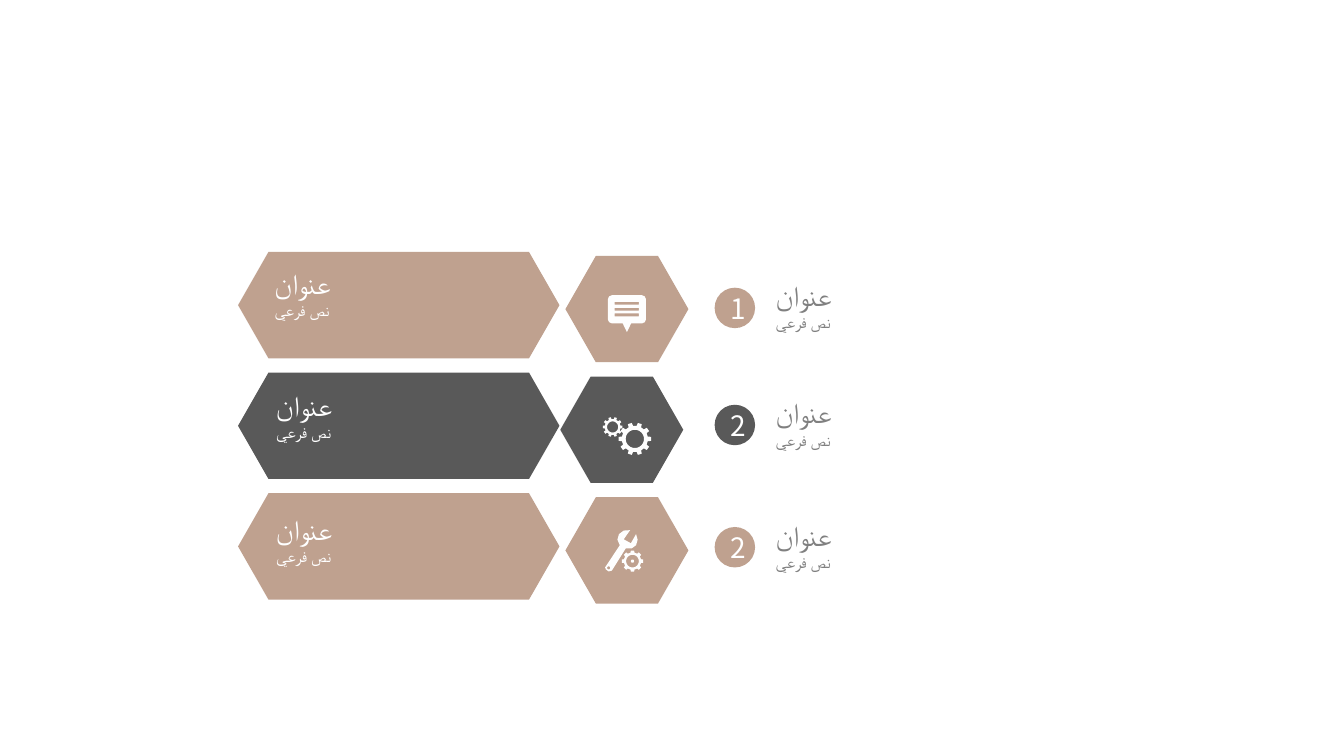
from math import cos, sin, pi
from pptx import Presentation
from pptx.util import Cm, Pt
from pptx.dml.color import RGBColor
from pptx.enum.shapes import MSO_SHAPE
from pptx.enum.text import MSO_ANCHOR, MSO_AUTO_SIZE, PP_ALIGN

COLORS = {"tan": "BFA18F", "dark": "595959", "white": "FFFFFF",
          "icon": "FEFEFE", "gray": "808080"}
FONT = "Noto Sans CJK SC"
LABEL = [("عنوان", 20), ("نص فرعي", 12)]


def paint(s, color):
    s.shadow.inherit = False
    s.fill.solid()
    s.fill.fore_color.rgb = RGBColor.from_string(COLORS[color])
    s.line.fill.background()


def write(tf, lines, color, align):
    tf.word_wrap = True
    for i, (text, size) in enumerate(lines):
        p = tf.add_paragraph() if i else tf.paragraphs[0]
        p.alignment = align
        r = p.add_run()
        r.text = text
        r.font.size = Pt(size)
        r.font.name = FONT
        r.font.color.rgb = RGBColor.from_string(COLORS[color])


prs = Presentation()
prs.slide_width, prs.slide_height = Cm(33.87), Cm(19.05)
slide = prs.slides.add_slide(prs.slide_layouts[6])
shapes = slide.shapes

# color, hexagon left, number, circle top, label left, label top, title top
rows = [
    ("tan", 14.25, "1", 7.25, 6.67, 6.58, 6.89),
    ("dark", 14.12, "2", 10.2, 6.71, 9.66, 9.85),
    ("tan", 14.25, "2", 13.28, 6.71, 12.78, 12.94),
]
for i, (color, hex_left, number, circle_top, label_left, label_top, title_top) in enumerate(rows):
    top = 6.35 + 3.04 * i
    for x, y, w in [(hex_left, top + 0.1, 3.1), (6, top, 8.1)]:
        s = shapes.add_shape(MSO_SHAPE.HEXAGON, Cm(x), Cm(y), Cm(w), Cm(2.68))
        s.adjustments[0] = 0.286
        paint(s, color)

    s = shapes.add_shape(MSO_SHAPE.OVAL, Cm(18.01), Cm(circle_top), Cm(1.02), Cm(1.02))
    paint(s, color)
    s.text_frame.vertical_anchor = MSO_ANCHOR.MIDDLE
    write(s.text_frame, [(number, 20)], "white", PP_ALIGN.CENTER)

    for x, y, w, text_color in [(19.3, title_top, 10.57, "gray"),
                                (label_left, label_top, 6.93, "white")]:
        tf = shapes.add_textbox(Cm(x), Cm(y), Cm(w), Cm(1.63)).text_frame
        tf.auto_size = MSO_AUTO_SIZE.SHAPE_TO_FIT_TEXT
        write(tf, LABEL, text_color, PP_ALIGN.LEFT)

bubble = [[(15.42, 7.44), (16.18, 7.44), (16.25, 7.47), (16.28, 7.54),
           (16.28, 8.05), (16.25, 8.12), (16.18, 8.15), (15.42, 8.15),
           (15.35, 8.12), (15.32, 8.05), (15.32, 7.54), (15.35, 7.47)]]
for y in (7.61, 7.76, 7.9):
    bubble.append([(15.49, y), (16.1, y), (16.1, y + 0.07), (15.49, y + 0.07)])
bubble_tail = [[(15.67, 8.1), (15.93, 8.1), (15.8, 8.37)]]

wrench = [
    [(15.27, 14.27), (15.62, 13.74), (15.56, 13.6), (15.6, 13.46), (15.72, 13.37),
     (15.88, 13.36), (15.72, 13.59), (15.9, 13.69), (16.03, 13.46), (16.07, 13.6),
     (16.03, 13.74), (15.92, 13.82), (15.77, 13.82), (15.42, 14.38), (15.34, 14.4),
     (15.27, 14.35), (15.25, 14.3)],
    [(15.34 + 0.04 * cos(k * pi / 6), 14.31 + 0.04 * sin(k * pi / 6)) for k in range(12)],
]

icons = [bubble_tail, bubble, wrench]
for cx, cy, tip, root, hole, teeth, phase in [
        (16, 11.06, 0.41, 0.33, 0.23, 10, 0.5),
        (15.44, 10.76, 0.25, 0.2, 0.14, 10, 0.5),
        (15.94, 14.14, 0.27, 0.22, 0.16, 8, 0)]:
    rim = []
    for k in range(teeth):
        for offset, radius in [(-0.28, root), (-0.2, tip), (0.2, tip), (0.28, root)]:
            a = (k + phase + offset) * 2 * pi / teeth - pi / 2
            rim.append((cx + radius * cos(a), cy + radius * sin(a)))
    bore = [(cx + hole * cos(k * pi / 18), cy + hole * sin(k * pi / 18)) for k in range(36)]
    icons.append([rim, bore])

for contours in icons:
    outlines = [[(Cm(x), Cm(y)) for x, y in contour] for contour in contours]
    fb = shapes.build_freeform(*outlines[0][0], scale=1.0)
    for n, outline in enumerate(outlines):
        if n:
            fb.move_to(*outline[0])
        fb.add_line_segments(outline[1:], close=True)
    paint(fb.convert_to_shape(), "icon")

s = shapes.add_shape(MSO_SHAPE.OVAL, Cm(15.9), Cm(14.1), Cm(0.08), Cm(0.08))
paint(s, "icon")

prs.save("out.pptx")
